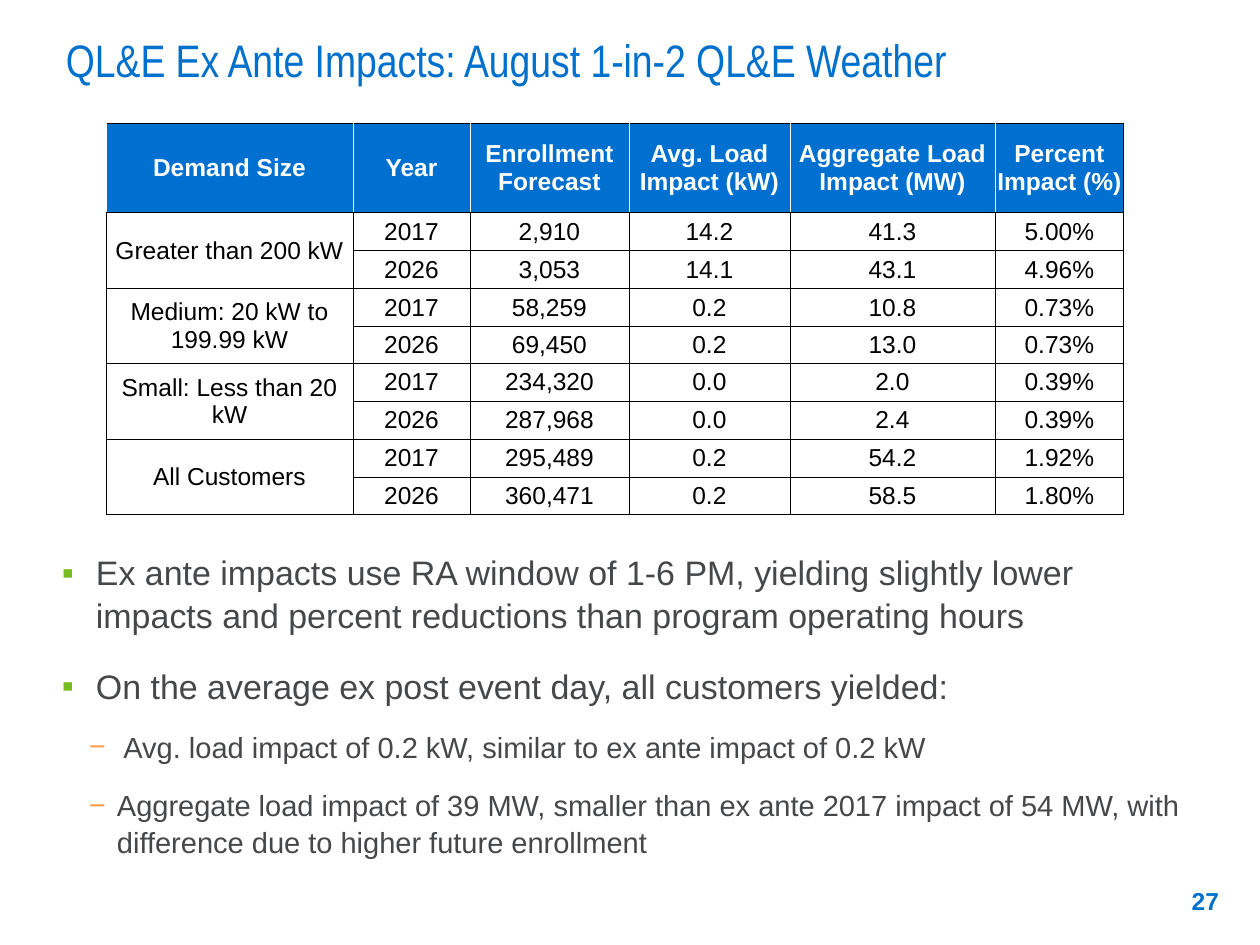
"""Build the ex ante load impact slide with its table and bullet notes."""
import pptx
import pptx.dml.color
import pptx.enum.text
import pptx.oxml
import pptx.oxml.ns
import pptx.util

COLORS = {
    "title": "0070CD", "header": "0070D0", "body": "464749", "black": "000000",
    "white": "FFFFFF", "square": "77BC1F", "dash": "FB9E4C",
}
ALIGN = pptx.enum.text.PP_ALIGN
ANCHOR = pptx.enum.text.MSO_ANCHOR
HEADERS = ["Demand Size", "Year", "Enrollment Forecast", "Avg. Load Impact (kW)",
           "Aggregate Load Impact (MW)", "Percent Impact (%)"]
YEARS = ["2017", "2026"]
IMPACTS = {
    "Greater than 200 kW": [["2,910", "14.2", "41.3", "5.00%"],
                            ["3,053", "14.1", "43.1", "4.96%"]],
    "Medium: 20 kW to 199.99 kW": [["58,259", "0.2", "10.8", "0.73%"],
                                   ["69,450", "0.2", "13.0", "0.73%"]],
    "Small: Less than 20 kW": [["234,320", "0.0", "2.0", "0.39%"],
                               ["287,968", "0.0", "2.4", "0.39%"]],
    "All Customers": [["295,489", "0.2", "54.2", "1.92%"],
                      ["360,471", "0.2", "58.5", "1.80%"]],
}
COLUMN_WIDTHS = [247, 117, 159, 161, 205, 129]
ROW_HEIGHTS = [89] + [38, 38, 38, 37] * 2
NOTES = [
    (0, "Ex ante impacts use RA window of 1-6 PM, yielding slightly lower impacts "
        "and percent reductions than program operating hours"),
    (0, "On the average ex post event day, all customers yielded:"),
    (1, " Avg. load impact of 0.2 kW, similar to ex ante impact of 0.2 kW"),
    (1, "Aggregate load impact of 39 MW, smaller than ex ante 2017 impact of 54 MW, "
        "with difference due to higher future enrollment"),
]
NOTE_LEVELS = [
    {"size": 19.4, "left": 34, "hanging": 34, "before": 4, "bullet": "▪", "color": "square"},
    {"size": 16.6, "left": 55, "hanging": 28, "before": 0.3, "bullet": "−", "color": "dash"},
]


def px(length):
    return pptx.util.Emu(round(length * 914400 / 126))


def rgb(name):
    return pptx.dml.color.RGBColor.from_string(COLORS[name])


def assign(target, values):
    for name, value in values.items():
        setattr(target, name, value)


class SlideBuilder:
    def __init__(self, slide):
        self.slide = slide

    def style(self, paragraph, size, color, bold=False, name="Arial"):
        assign(paragraph.font, {"size": pptx.util.Pt(size), "bold": bold, "name": name})
        paragraph.font.color.rgb = rgb(color)

    def frame(self, box, insets, anchor):
        text_frame = self.slide.shapes.add_textbox(*map(px, box)).text_frame
        sides = ["margin_left", "margin_top", "margin_right", "margin_bottom"]
        assign(text_frame, dict(zip(sides, map(px, insets))))
        assign(text_frame, {"word_wrap": True, "vertical_anchor": anchor})
        return text_frame

    def text(self, box, insets, anchor, text, align=ALIGN.LEFT, **font):
        paragraph = self.frame(box, insets, anchor).paragraphs[0]
        assign(paragraph, {"text": text, "alignment": align})
        self.style(paragraph, **font)

    def bullets(self, box, notes):
        text_frame = self.frame(box, (0, 6, 13, 6), ANCHOR.TOP)
        for index, (level, text) in enumerate(notes):
            paragraph = text_frame.add_paragraph() if index else text_frame.paragraphs[0]
            look = NOTE_LEVELS[level]
            properties = paragraph._p.get_or_add_pPr()
            properties.set("marL", str(px(look["left"])))
            properties.set("indent", str(-px(look["hanging"])))
            namespace = pptx.oxml.ns.nsdecls("a")
            for xml in (
                f'<a:buClr {namespace}><a:srgbClr val="{COLORS[look["color"]]}"/></a:buClr>',
                f'<a:buFont {namespace} typeface="Arial"/>',
                f'<a:buChar {namespace} char="{look["bullet"]}"/>',
            ):
                properties.append(pptx.oxml.parse_xml(xml))
            assign(paragraph, {
                "text": text, "level": level, "line_spacing": 1.05,
                "space_before": pptx.util.Pt(look["before"] if index else 0),
                "space_after": pptx.util.Pt(12),
            })
            self.style(paragraph, look["size"], "body")

    def borders(self, cell, colors):
        for side, color in colors.items():
            cell._tc.get_or_add_tcPr().append(pptx.oxml.parse_xml(
                f'<a:ln{side} {pptx.oxml.ns.nsdecls("a")} w="6350"><a:solidFill>'
                f'<a:srgbClr val="{COLORS[color]}"/></a:solidFill></a:ln{side}>'))

    def cell(self, cell, text, header, last):
        side, right = ("white", "black" if last else "white") if header else ("black", "black")
        self.borders(cell, {"L": side, "R": right, "T": "black", "B": "black"})
        cell.fill.solid()
        cell.fill.fore_color.rgb = rgb("header" if header else "white")
        assign(cell, {"margin_left": px(1), "margin_right": px(1), "margin_top": px(1),
                      "margin_bottom": 0, "vertical_anchor": ANCHOR.MIDDLE})
        paragraph = cell.text_frame.paragraphs[0]
        assign(paragraph, {"text": text, "alignment": ALIGN.CENTER})
        self.style(paragraph, 14, "white" if header else "black", header)

    def table(self, left, top, rows, widths, heights):
        table = self.slide.shapes.add_table(
            len(rows), len(widths), px(left), px(top), px(sum(widths)), px(sum(heights))).table
        assign(table, {"first_row": False, "horz_banding": False})
        for column, width in zip(table.columns, widths):
            column.width = px(width)
        for row, height in zip(table.rows, heights):
            row.height = px(height)
        for row_index, values in enumerate(rows):
            for column_index, value in enumerate(values):
                self.cell(table.cell(row_index, column_index), value,
                          row_index == 0, column_index == len(widths) - 1)
        for row_index in range(1, len(rows), len(YEARS)):
            table.cell(row_index, 0).merge(table.cell(row_index + len(YEARS) - 1, 0))


def main():
    presentation = pptx.Presentation()
    assign(presentation, {"slide_width": px(1260), "slide_height": px(945)})
    builder = SlideBuilder(presentation.slides.add_slide(presentation.slide_layouts[6]))
    builder.text((66, 0, 1135, 93), (0, 6, 13, 6), ANCHOR.BOTTOM,
                 "QL&E Ex Ante Impacts: August 1-in-2 QL&E Weather",
                 size=26, color="title", name="Arial Narrow")
    builder.bullets((62, 544, 1135, 371), NOTES)
    builder.text((1142, 876, 88, 50), (11, 5, 11, 5), ANCHOR.MIDDLE, "27", ALIGN.RIGHT,
                 size=14, color="title", bold=True)
    rows = [HEADERS]
    for group, yearly_values in IMPACTS.items():
        for index, (year, values) in enumerate(zip(YEARS, yearly_values)):
            rows.append(["" if index else group, year, *values])
    builder.table(106, 123, rows, COLUMN_WIDTHS, ROW_HEIGHTS)
    presentation.save("out.pptx")


if __name__ == "__main__":
    main()
